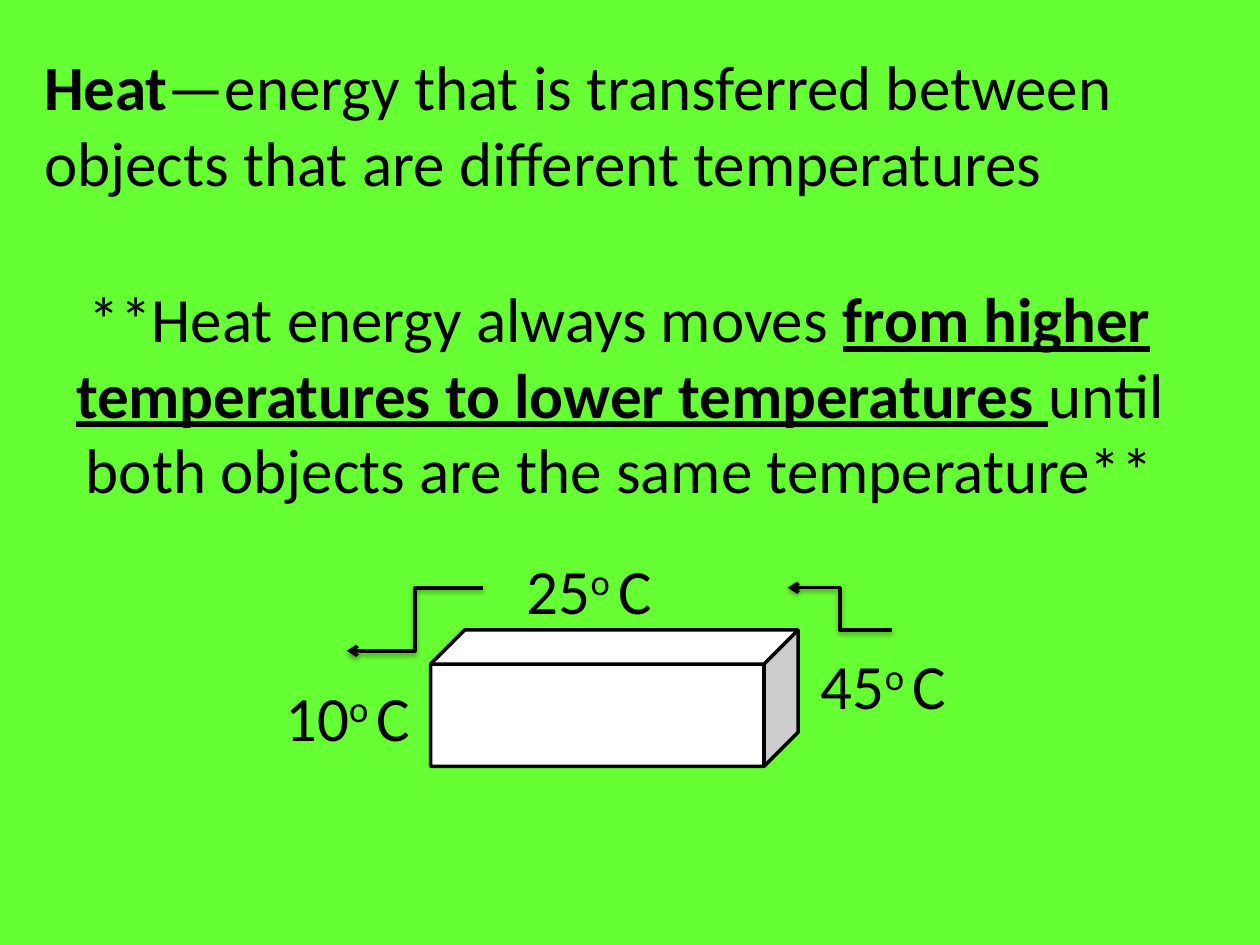
from lxml.etree import SubElement
from pptx import Presentation
from pptx.dml.color import RGBColor
from pptx.enum.shapes import MSO_CONNECTOR, MSO_SHAPE
from pptx.enum.text import PP_ALIGN
from pptx.oxml.ns import qn
from pptx.util import Cm, Pt

BLACK, WHITE, GREEN = "000000", "FFFFFF", "66FF33"


def paint(fill, color):
    """Make a fill solid in a hex colour."""
    fill.solid()
    fill.fore_color.rgb = RGBColor.from_string(color)


def add_text(s, box, runs, align=PP_ALIGN.LEFT):
    """Add a one-paragraph text box; each run is its text and its styles."""
    tf = s.shapes.add_textbox(*map(Cm, box)).text_frame
    tf.word_wrap = True
    p = tf.paragraphs[0]
    p.alignment = align
    p.font.name, p.font.size = "Calibri", Pt(36)
    p.font.color.rgb = RGBColor.from_string(BLACK)
    for text, styles in runs:
        r = p.add_run()
        r.text = text
        if "b" in styles:
            r.font.bold = True
        if "u" in styles:
            r.font.underline = True
        if "^" in styles:
            r.font._element.set("baseline", "30000")


def add_temperature(s, left, top, degrees):
    """Add a temperature label with a raised degree sign."""
    add_text(s, (left, top, 5.08, 1.8), [(degrees, ""), ("o ", "^"), ("C", "")])


def add_cube(s, box):
    """Add the white block that the heat passes through."""
    sp = s.shapes.add_shape(MSO_SHAPE.CUBE, *map(Cm, box))
    sp.shadow.inherit = False
    paint(sp.fill, WHITE)
    paint(sp.line.fill, BLACK)
    sp.line.width = Pt(2)


def add_heat_arrow(s, start, end):
    """Add a bent arrow with a soft shadow below it."""
    cxn = s.shapes.add_connector(MSO_CONNECTOR.ELBOW, *map(Cm, start + end))
    paint(cxn.line.fill, BLACK)
    cxn.line.width = Pt(2)
    SubElement(cxn.line._get_or_add_ln(), qn("a:tailEnd"), type="arrow")
    effects = SubElement(cxn._element.spPr, qn("a:effectLst"))
    shadow = SubElement(effects, qn("a:outerShdw"), blurRad=str(Pt(3.1)),
                        dist=str(Pt(1.6)), dir="5400000", rotWithShape="0")
    color = SubElement(shadow, qn("a:srgbClr"), val=BLACK)
    SubElement(color, qn("a:alpha"), val="38000")


def main():
    """Build the heat transfer slide."""
    prs = Presentation()
    prs.slide_width, prs.slide_height = Cm(25.4), Cm(19.05)
    s = prs.slides.add_slide(prs.slide_layouts[6])
    paint(s.background.fill, GREEN)

    add_text(s, (0.64, 0.84, 24.13, 3.33), [
        ("Heat", "b"),
        ("—energy that is transferred between objects that are different temperatures", ""),
    ])
    add_text(s, (0.43, 5.51, 24.13, 4.88), [
        ("**Heat energy always moves ", ""),
        ("from higher temperatures to lower temperatures", "bu"),
        (" ", "u"),
        ("until both objects are the same temperature**", ""),
    ], PP_ALIGN.CENTER)

    add_cube(s, (8.68, 12.7, 7.41, 2.75))
    for left, top, degrees in ((5.5, 13.55, "10"), (10.37, 11, "25"), (16.3, 12.91, "45")):
        add_temperature(s, left, top, degrees)
    add_heat_arrow(s, (17.99, 12.7), (15.88, 11.85))
    add_heat_arrow(s, (9.74, 11.85), (6.99, 13.12))

    prs.save("out.pptx")


if __name__ == "__main__":
    main()
